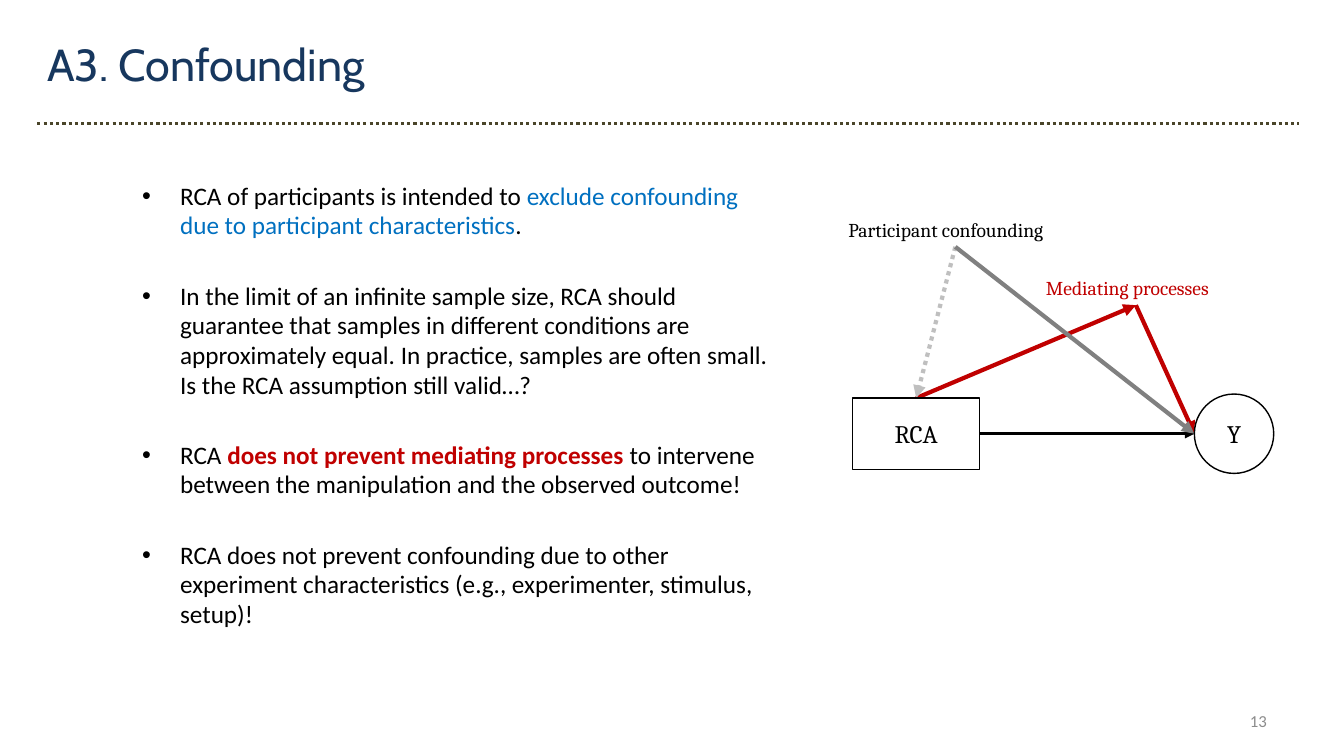
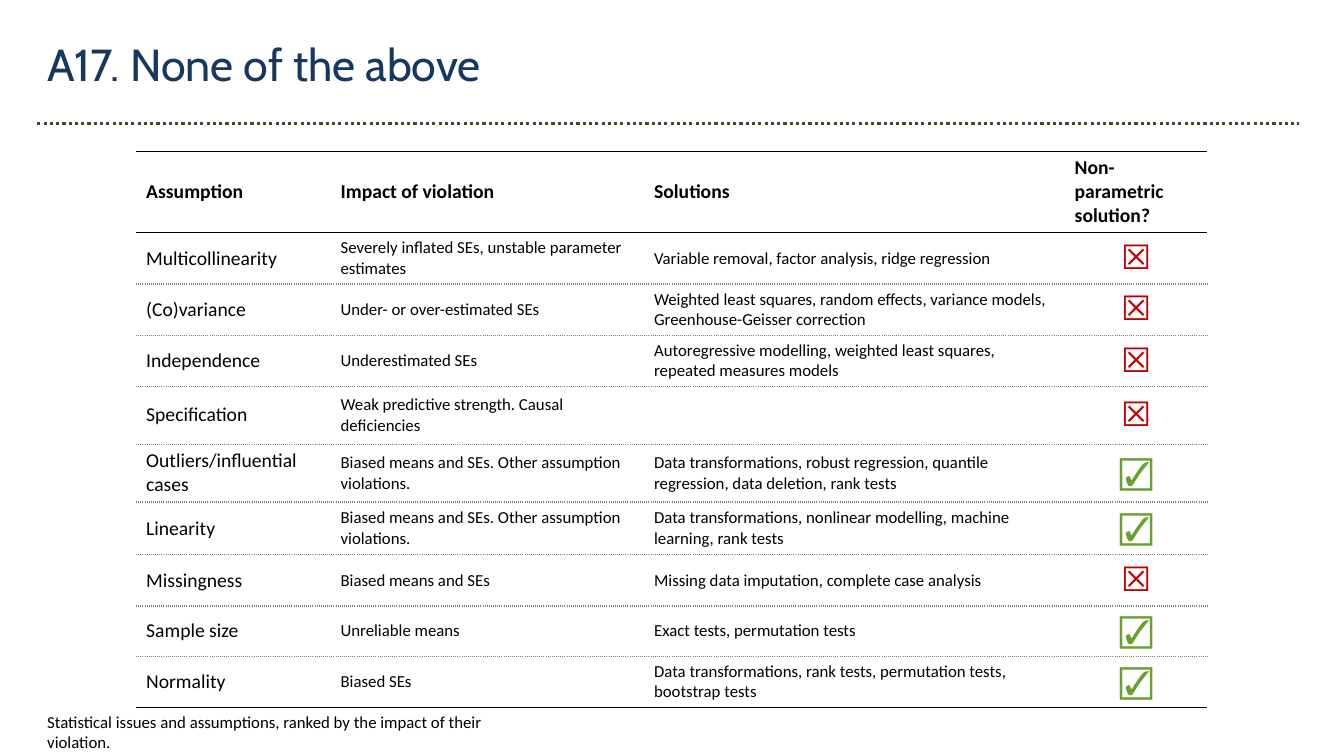
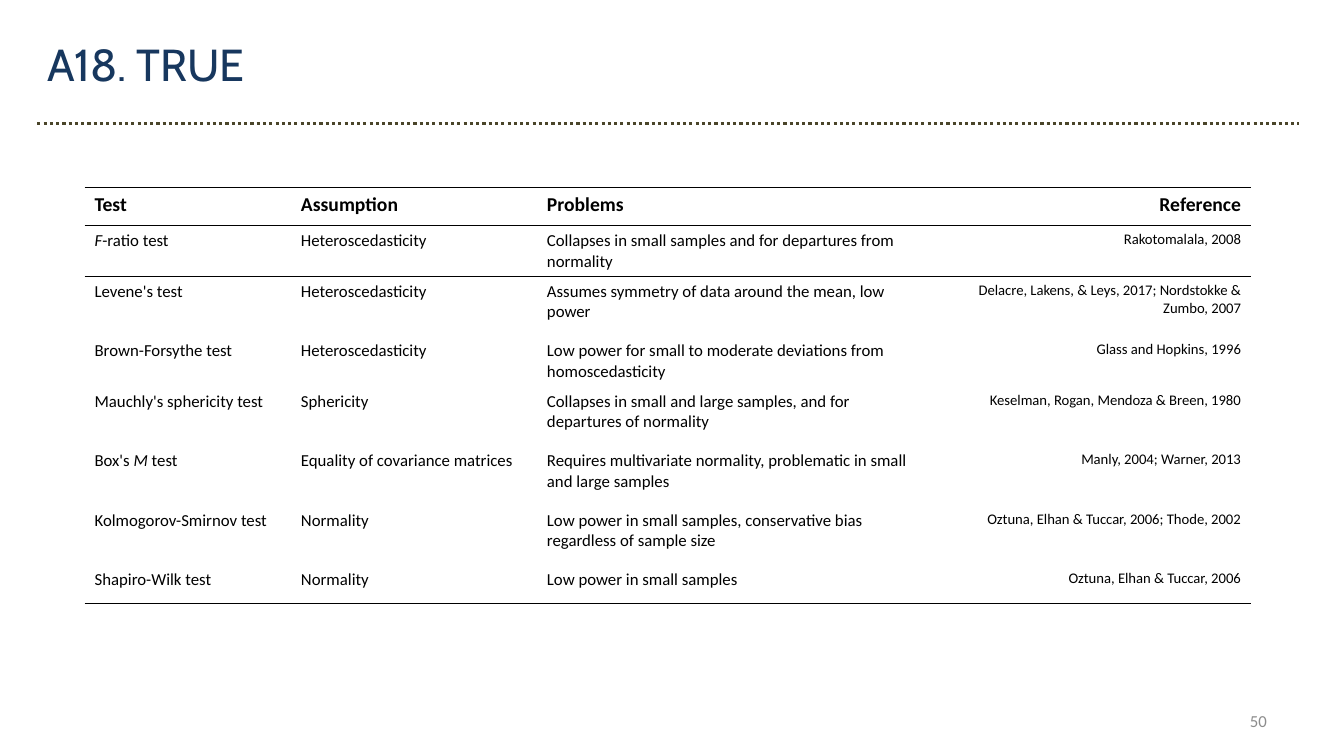
from lxml.etree import SubElement
from pptx import Presentation
from pptx.dml.color import RGBColor
from pptx.enum.dml import MSO_LINE
from pptx.enum.shapes import MSO_CONNECTOR, MSO_SHAPE
from pptx.enum.text import MSO_ANCHOR, PP_ALIGN
from pptx.oxml import parse_xml
from pptx.oxml.ns import nsdecls, qn
from pptx.util import Cm, Pt

NAVY = RGBColor(0x17, 0x37, 0x5E)
OLIVE = RGBColor(0x4A, 0x45, 0x2A)
BLACK = RGBColor(0, 0, 0)
WHITE = RGBColor(0xFF, 0xFF, 0xFF)
GREY = RGBColor(0x80, 0x80, 0x80)
PALE = RGBColor(0xBF, 0xBF, 0xBF)
FAINT = RGBColor(0x8C, 0x8C, 0x8C)
BLUE = RGBColor(0x00, 0x70, 0xC0)
RED = RGBColor(0xC0, 0x00, 0x00)
GREEN = RGBColor(0x69, 0xA1, 0x31)

HEAD, BODY, SERIF = "Cabin", "Calibri", "Cambria"
LEFT, MID, RIGHT = PP_ALIGN.LEFT, PP_ALIGN.CENTER, PP_ALIGN.RIGHT
DOT = MSO_LINE.ROUND_DOT
PLAIN_TABLE = "{2D5ABB26-0587-4C30-8999-92F81FD0307C}"

SOLID, DOTTED = (BLACK, "solid"), (GREY, "sysDot")
CROSS = [("☒", dict(color=RED))]
CHECK = [("☑", dict(color=GREEN, font="Times New Roman"))]

POINTS = [
    [("RCA of participants is intended to ", {}),
     ("exclude confounding due to participant characteristics", dict(color=BLUE)),
     (".", {})],
    "In the limit of an infinite sample size, RCA should guarantee that samples in "
    "different conditions are approximately equal. In practice, samples are often "
    "small. Is the RCA assumption still valid…?",
    [("RCA ", {}),
     ("does not prevent mediating processes ", dict(color=RED, bold=True)),
     ("to intervene between the manipulation and the observed outcome!", {})],
    "RCA does not prevent confounding due to other experiment characteristics "
    "(e.g., experimenter, stimulus, setup)!",
]

ISSUES = [
    ("Assumption", "Impact of violation", "Solutions", "Non-parametric solution?"),
    ("Multicollinearity", "Severely inflated SEs, unstable parameter estimates",
     "Variable removal, factor analysis, ridge regression", CROSS),
    ("(Co)variance", "Under- or over-estimated SEs",
     "Weighted least squares, random effects, variance models, "
     "Greenhouse-Geisser correction", CROSS),
    ("Independence", "Underestimated SEs",
     "Autoregressive modelling, weighted least squares, repeated measures models", CROSS),
    ("Specification", "Weak predictive strength. Causal deficiencies", "", CROSS),
    ("Outliers/influential cases", "Biased means and SEs. Other assumption violations.",
     "Data transformations, robust regression, quantile regression, data deletion, "
     "rank tests", CHECK),
    ("Linearity", "Biased means and SEs. Other assumption violations.",
     "Data transformations, nonlinear modelling, machine learning, rank tests", CHECK),
    ("Missingness", "Biased means and SEs",
     "Missing data imputation, complete case analysis", CROSS),
    ("Sample size", "Unreliable means", "Exact tests, permutation tests", CHECK),
    ("Normality", "Biased SEs",
     "Data transformations, rank tests, permutation tests, bootstrap tests", CHECK),
]

TESTS = [
    ("Test", "Assumption", "Problems", "Reference"),
    ([("F", dict(italic=True)), ("-ratio test", {})], "Heteroscedasticity",
     "Collapses in small samples and for departures from normality",
     "Rakotomalala, 2008"),
    ("Levene's test", "Heteroscedasticity",
     "Assumes symmetry of data around the mean, low power",
     "Delacre, Lakens, & Leys, 2017; Nordstokke & Zumbo, 2007"),
    ("Brown-Forsythe test", "Heteroscedasticity",
     "Low power for small to moderate deviations from homoscedasticity",
     "Glass and Hopkins, 1996"),
    ("Mauchly's sphericity test", "Sphericity",
     "Collapses in small and large samples, and for departures of normality",
     "Keselman, Rogan, Mendoza & Breen, 1980"),
    ([("Box's ", {}), ("M", dict(italic=True)), (" test", {})],
     "Equality of covariance matrices",
     "Requires multivariate normality, problematic in small and large samples",
     "Manly, 2004; Warner, 2013"),
    ("Kolmogorov-Smirnov test", "Normality",
     "Low power in small samples, conservative bias regardless of sample size",
     "Oztuna, Elhan & Tuccar, 2006; Thode, 2002"),
    ("Shapiro-Wilk test", "Normality", "Low power in small samples",
     "Oztuna, Elhan & Tuccar, 2006"),
]


def write(par, text, align=LEFT, **look):
    """Fill a paragraph from a string, or from (string, format) pairs."""
    par.alignment = align
    for part, extra in [(text, {})] if isinstance(text, str) else text:
        fmt = dict(size=12, font=BODY, color=BLACK, bold=False, italic=False)
        fmt.update(look)
        fmt.update(extra)
        run = par.add_run()
        run.text = part
        run.font.size = Pt(fmt["size"])
        run.font.name = fmt["font"]
        run.font.bold = fmt["bold"]
        run.font.italic = fmt["italic"]
        run.font.color.rgb = fmt["color"]


def place(shape, x, y, w, h):
    shape.left, shape.top, shape.width, shape.height = Cm(x), Cm(y), Cm(w), Cm(h)


def label(slide, text, x, y, w, h, wrap=True, anchor=MSO_ANCHOR.TOP, **look):
    frame = slide.shapes.add_textbox(Cm(x), Cm(y), Cm(w), Cm(h)).text_frame
    frame.word_wrap = wrap
    frame.vertical_anchor = anchor
    write(frame.paragraphs[0], text, **look)


def line(slide, start, end, color, width, dash=None, arrow=True):
    link = slide.shapes.add_connector(
        MSO_CONNECTOR.STRAIGHT, *(Cm(v) for v in (*start, *end)))
    link.line.color.rgb = color
    link.line.width = Pt(width)
    if dash:
        link.line.dash_style = dash
    props = link._element.spPr
    if arrow:
        SubElement(props.find(qn("a:ln")), qn("a:tailEnd"), type="triangle")
    SubElement(props, qn("a:effectLst"))


def node(slide, kind, text, x, y, w, h):
    shape = slide.shapes.add_shape(kind, Cm(x), Cm(y), Cm(w), Cm(h))
    shape.shadow.inherit = False
    shape.fill.solid()
    shape.fill.fore_color.rgb = WHITE
    shape.line.color.rgb = BLACK
    shape.line.width = Pt(1)
    shape.text_frame.vertical_anchor = MSO_ANCHOR.MIDDLE
    write(shape.text_frame.paragraphs[0], text, align=MID, size=18, font=SERIF)


def base(deck, title, page=None):
    """Add a slide with the shared title, dotted rule and page number."""
    slide = deck.slides.add_slide(deck.slide_layouts[5])
    place(slide.shapes.title, 0.94, 0.81, 29.6, 1.63)
    frame = slide.shapes.title.text_frame
    frame.vertical_anchor = MSO_ANCHOR.TOP
    write(frame.paragraphs[0], title, size=32, font=HEAD, color=NAVY)
    line(slide, (0.94, 3.12), (32.74, 3.12), OLIVE, 2.25, DOT, arrow=False)
    if page:
        label(slide, page, 24.28, 17.65, 7.9, 1.02, anchor=MSO_ANCHOR.MIDDLE,
              align=RIGHT, color=FAINT)
    return slide


def bullets(slide, items, x, y, w, h):
    frame = slide.shapes.add_textbox(Cm(x), Cm(y), Cm(w), Cm(h)).text_frame
    frame.word_wrap = True
    for i, item in enumerate(items):
        par = frame.add_paragraph() if i else frame.paragraphs[0]
        par.space_before = Pt(29 if i else 0)
        par.line_spacing = 0.98
        write(par, item, size=18)
        props = par._p.get_or_add_pPr()
        props.set("marL", str(Cm(0.96)))
        props.set("indent", str(-Cm(0.96)))
        SubElement(props, qn("a:buFont"), typeface="Arial")
        SubElement(props, qn("a:buChar"), char="•")


def graph(slide, x, y):
    """Draw the causal paths between RCA and Y."""
    wide, deep, tall = 5.89, 5.03, 0.86
    box_x, box_y, box_w, box_h = x + 0.36, y + 4.67, 3.2, 1.8
    size = 2
    mid = box_y + box_h / 2
    goal = (x + 8.97, mid)
    cause = (x + wide / 2, y + tall)
    med_x, med_y = x + 4.98, y + 1.47
    via = (med_x + deep / 2, med_y + tall)
    top = (box_x + box_w / 2, box_y)

    line(slide, (box_x + box_w, mid), goal, BLACK, 2.25)
    label(slide, "Mediating processes", med_x, med_y, deep, tall, wrap=False,
          size=14, font=SERIF, color=RED)
    label(slide, "Participant confounding", x, y, wide, tall, wrap=False,
          size=14, font=SERIF)
    line(slide, top, via, RED, 3)
    line(slide, via, goal, RED, 3)
    line(slide, cause, top, PALE, 3, DOT)
    line(slide, cause, goal, GREY, 3)
    node(slide, MSO_SHAPE.RECTANGLE, "RCA", box_x, box_y, box_w, box_h)
    node(slide, MSO_SHAPE.OVAL, "Y", goal[0], mid - size / 2, size, size)


def border(cell, above, below):
    """Set the four edges of a cell; the sides stay open."""
    props = cell._tc.get_or_add_tcPr()
    edges = zip("LRTB", (None, None, above, below))
    for i, (side, edge) in enumerate(edges):
        if edge:
            color, dash = edge
            ink = (f'<a:solidFill><a:srgbClr val="{color}"/></a:solidFill>'
                   f'<a:prstDash val="{dash}"/>')
        else:
            ink = "<a:noFill/>"
        props.insert(i, parse_xml(
            f'<a:ln{side} {nsdecls("a")} w="{Pt(1)}">{ink}</a:ln{side}>'))


def grid(slide, x, y, cols, rows, data, edges, looks, head, anchor):
    """Add a table; looks are column formats, head changes them in the first row."""
    table = slide.shapes.add_table(
        len(rows), len(cols), Cm(x), Cm(y), Cm(sum(cols)), Cm(sum(rows))).table
    table.first_row = table.horz_banding = False
    table._tbl.tblPr.find(qn("a:tableStyleId")).text = PLAIN_TABLE
    for col, width in zip(table.columns, cols):
        col.width = Cm(width)
    for r, (row, height) in enumerate(zip(table.rows, rows)):
        row.height = Cm(height)
        for cell, text, look in zip(row.cells, data[r], looks):
            cell.fill.background()
            cell.vertical_anchor = anchor
            border(cell, edges[r], edges[r + 1])
            if text:
                write(cell.text_frame.paragraphs[0], text,
                      **(look if r else {**look, **head}))


def main():
    deck = Presentation()
    deck.slide_width, deck.slide_height = Cm(33.87), Cm(19.05)

    slide = base(deck, "A3. Confounding", "13")
    bullets(slide, POINTS, 3.33, 4.45, 16.41, 13.69)
    graph(slide, 21.13, 5.36)

    slide = base(deck, "A17. None of the above")
    grid(slide, 3.43, 3.81, [4.9, 7.9, 10.6, 3.6],
         [2.03, 1.27, 1.27, 1.27, 1.46, 1.46, 1.33, 1.27, 1.27, 1.27],
         ISSUES, [SOLID] * 2 + [DOTTED] * 8 + [SOLID],
         [dict(size=14), {}, {}, dict(size=24, align=MID)],
         dict(size=14, bold=True, align=LEFT), MSO_ANCHOR.MIDDLE)
    label(slide, "Statistical issues and assumptions, ranked by the impact of "
          "their violation.", 0.94, 17.8, 12.7, 0.77)

    slide = base(deck, "A18. TRUE", "50")
    grid(slide, 2.13, 4.72, [5.2, 6.2, 10, 8],
         [0.97, 1.27, 1.5, 1.27, 1.5, 1.5, 1.5, 0.97],
         TESTS, [SOLID] * 3 + [None] * 5 + [SOLID],
         [{}, {}, {}, dict(size=10.5, align=RIGHT)],
         dict(size=14, bold=True), MSO_ANCHOR.TOP)

    deck.save("out.pptx")


if __name__ == "__main__":
    main()
